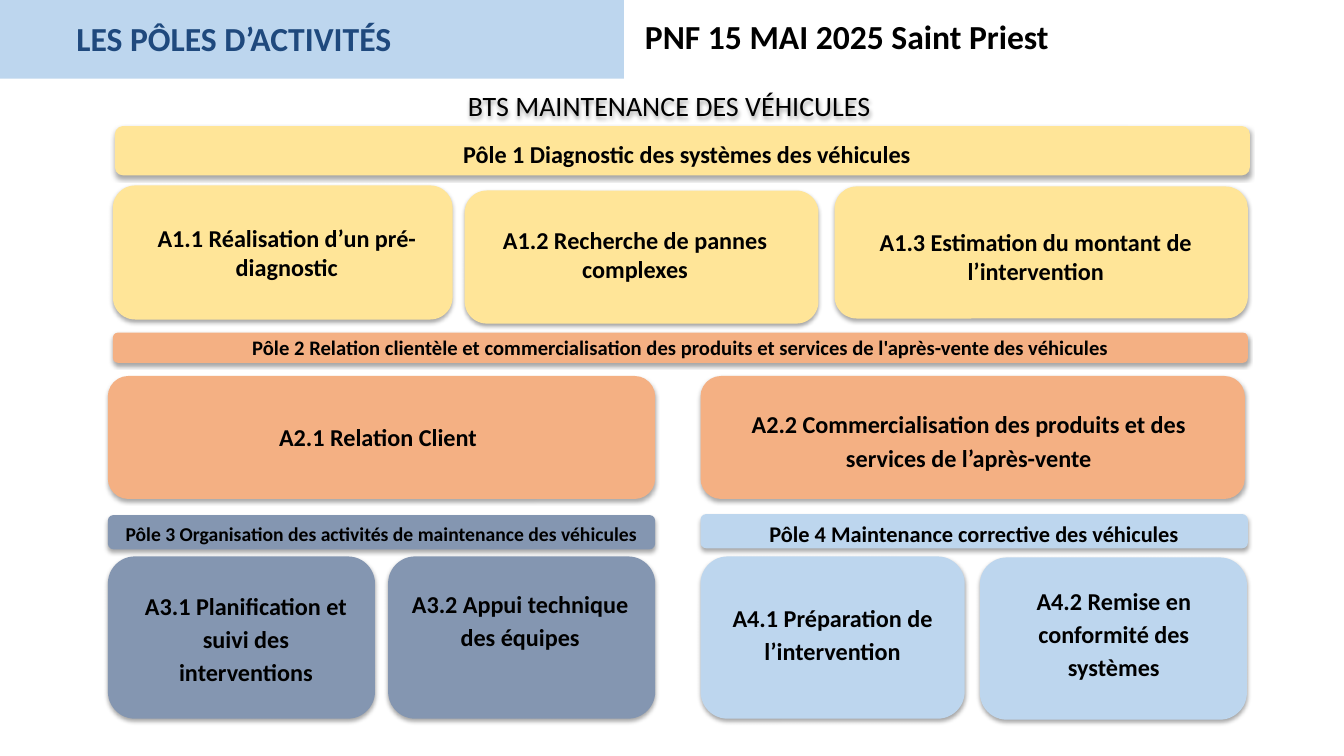
from collections import namedtuple

from lxml.etree import SubElement
from pptx import Presentation
from pptx.dml.color import RGBColor
from pptx.enum.shapes import MSO_SHAPE as Shape
from pptx.enum.text import MSO_ANCHOR as Anchor, PP_ALIGN as Align
from pptx.oxml.ns import qn
from pptx.util import Inches, Pt

# One grid cell is a tenth of an inch; boxes are (column, row, columns, rows).
CELL = Inches(0.1)
COLUMNS, ROWS = 133.33, 75
FONT = "Calibri"
CARD_SIZE = 17.3
LOOSE = 1.15
COLOURS = {
    "yellow": "FFE598",
    "orange": "F4B083",
    "slate": "8496B1",
    "sky": "BDD6EE",
    "navy": "1F497D",
    "black": "000000",
}

Pole = namedtuple("Pole", "colour size spacing bar cards")
# A tile without a caption box carries its text inside the shape.
Tile = namedtuple("Tile", "text box caption", defaults=[None])

POLES = [
    Pole("yellow", 17.3, 1.0,
         Tile("Pôle 1 Diagnostic des systèmes des véhicules",
              (11.4, 12.5, 112.6, 4.9), (12.8, 12.9, 110.7, 4.2)),
         [Tile("A1.1 Réalisation d’un pré-diagnostic",
               (11.2, 18.4, 33.7, 13.3), (12.6, 21.7, 31.7, 10.9)),
          Tile("A1.2 Recherche de pannes complexes",
               (46.1, 18.9, 35.1, 13.2), (46.5, 21.9, 33, 10.9)),
          Tile("A1.3 Estimation du montant de l’intervention",
               (82.8, 18.5, 41, 13.1), (84.7, 22.1, 36.1, 6.8))]),
    Pole("orange", 14.7, LOOSE,
         Tile("Pôle 2 Relation clientèle et commercialisation des produits "
              "et services de l'après-vente des véhicules",
              (11.2, 33, 112.6, 3), (19.6, 32.4, 95.8, 8.3)),
         [Tile("A2.1 Relation Client",
               (10.7, 37.3, 54.3, 12.2), (10.7, 41, 53.6, 4.2)),
          Tile("A2.2 Commercialisation des produits et des services "
               "de l’après-vente",
               (69.5, 37.3, 54, 12.2), (70.7, 39.7, 50.8, 7.5))]),
    Pole("slate", 14, LOOSE,
         Tile("Pôle 3 Organisation des activités de maintenance des véhicules",
              (10.7, 51.1, 54.3, 3.4)),
         [Tile("A3.1 Planification et suivi des interventions",
               (10.7, 55.2, 26.5, 16.1), (12.7, 57.7, 23.4, 10.9)),
          Tile("A3.2 Appui technique des équipes",
               (38.5, 55.2, 26.5, 16.1), (39.7, 57.5, 23.8, 7.5))]),
    Pole("sky", 16, LOOSE,
         Tile("Pôle 4 Maintenance corrective des véhicules",
              (69.5, 51, 54.3, 3.4)),
         [Tile("A4.1 Préparation de l’intervention",
               (69.5, 55.2, 26.2, 16.1), (71.1, 58.9, 23, 7.5)),
          Tile("A4.2 Remise en conformité des systèmes",
               (97.2, 55.3, 26.5, 16.1), (98.8, 57.2, 23.4, 10.9))]),
]


def on_grid(box):
    return [round(CELL * cells) for cells in box]


def add_shadow(shape):
    """Give the shape a soft shadow that falls straight down."""
    shape.shadow.inherit = False
    effects = shape._element.spPr.find(qn("a:effectLst"))
    shadow = SubElement(effects, qn("a:outerShdw"), blurRad="40000",
                        dist="23000", dir="5400000", rotWithShape="0")
    black = SubElement(shadow, qn("a:srgbClr"), val=COLOURS["black"])
    SubElement(black, qn("a:alpha"), val="35000")


def add_block(shapes, preset, box, colour):
    block = shapes.add_shape(preset, *on_grid(box))
    block.fill.solid()
    block.fill.fore_color.rgb = RGBColor.from_string(COLOURS[colour])
    block.line.fill.background()
    block.shadow.inherit = False
    return block


def write(shape, text, size, colour="black", bold=True,
          align=Align.CENTER, spacing=1.0):
    frame = shape.text_frame
    frame.word_wrap = True
    frame.text = text
    para = frame.paragraphs[0]
    para.alignment = align
    para.line_spacing = spacing
    font = para.runs[0].font
    font.name, font.size, font.bold = FONT, Pt(size), bold
    font.color.rgb = RGBColor.from_string(COLOURS[colour])


def add_text(shapes, box, text, size, **style):
    label = shapes.add_textbox(*on_grid(box))
    write(label, text, size, **style)
    return label


def add_tile(page, tile, colour, size, spacing):
    shapes = page.shapes.add_group_shape().shapes if tile.caption else page.shapes
    block = add_block(shapes, Shape.FLOWCHART_ALTERNATE_PROCESS, tile.box, colour)
    add_shadow(block)
    if tile.caption:
        add_text(shapes, tile.caption, tile.text, size, spacing=spacing)
    else:
        block.text_frame.vertical_anchor = Anchor.MIDDLE
        write(block, tile.text, size, spacing=spacing)


def add_pole(page, pole):
    add_tile(page, pole.bar, pole.colour, pole.size, LOOSE)
    for card in pole.cards:
        add_tile(page, card, pole.colour, CARD_SIZE, pole.spacing)


def add_header(page):
    add_block(page.shapes, Shape.RECTANGLE, (0, 0, 61.9, 7.8), "sky")
    add_text(page.shapes, (63, 1.1, 42.3, 5), "PNF 15 MAI 2025 Saint Priest",
             24, align=Align.LEFT)
    add_text(page.shapes, (6.6, 1.3, 66.7, 5), "LES PÔLES D’ACTIVITÉS",
             24, colour="navy", align=Align.LEFT)
    diploma = add_text(page.shapes, (30.7, 8.3, 71.4, 4.4),
                       "BTS MAINTENANCE DES VÉHICULES", 20, bold=False)
    add_shadow(diploma)


def main():
    deck = Presentation()
    deck.slide_width, deck.slide_height = on_grid((COLUMNS, ROWS))
    page = deck.slides.add_slide(deck.slide_layouts[6])
    add_header(page)
    for pole in POLES:
        add_pole(page, pole)
    deck.save("out.pptx")


if __name__ == "__main__":
    main()
